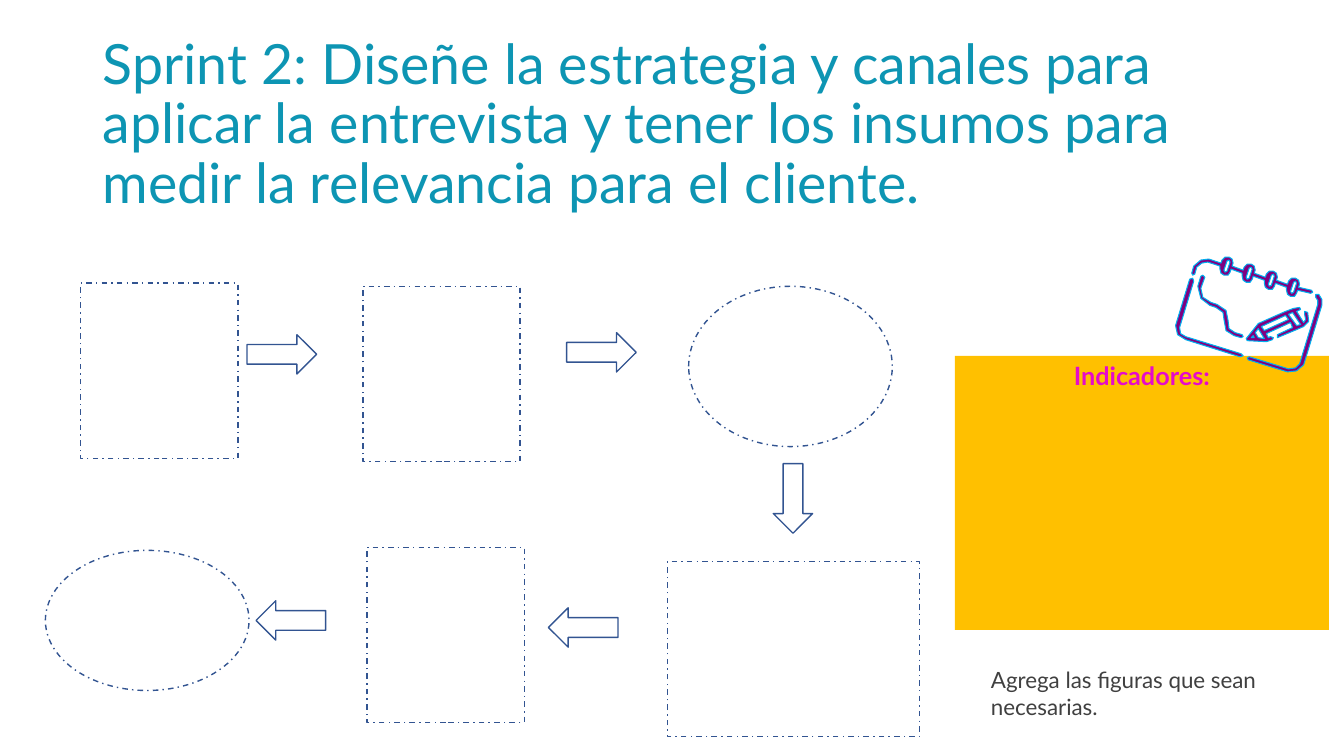
from dataclasses import dataclass

from pptx import Presentation
from pptx.dml.color import RGBColor
from pptx.enum.dml import MSO_LINE
from pptx.enum.shapes import MSO_SHAPE
from pptx.enum.text import MSO_ANCHOR, PP_ALIGN
from pptx.util import Pt

EMU_PER_PX = 9144


@dataclass(frozen=True)
class Theme:
    """Colours, font and type sizes of the slide."""
    font: str = "Lato"
    title: str = "0D95B3"
    outline: str = "325491"
    panel: str = "FFC000"
    heading: str = "E50BCB"
    hint: str = "404040"
    icon: str = "800080"
    icon_outline: str = "00B0F0"
    title_size: float = 39.6
    heading_size: int = 18
    hint_size: int = 16


THEME = Theme()

STEP_WIDTH, STEP_HEIGHT = 156, 174
OVAL_WIDTH = 202
ARROW_WIDTH, ARROW_HEIGHT = 69, 39
STEPS = [
    (MSO_SHAPE.RECTANGLE, 35, 0, STEP_WIDTH, STEP_HEIGHT),
    (MSO_SHAPE.RECTANGLE, 315, 3, STEP_WIDTH, STEP_HEIGHT),
    (MSO_SHAPE.OVAL, 638, 3, OVAL_WIDTH, 159),
    (MSO_SHAPE.RECTANGLE, 617, 276, 250, STEP_HEIGHT),
    (MSO_SHAPE.RECTANGLE, 319, 262, STEP_WIDTH, STEP_HEIGHT),
    (MSO_SHAPE.OVAL, 0, 265, OVAL_WIDTH, 139),
]
ARROWS = [(200, 51, 0), (517, 49, 0), (707, 194, 90), (499, 322, 180), (209, 315, 180)]

RING_COUNT, RING_STEP = 4, (22, 7)
RING_HOLE = [(54, 3), (55, 5), (52, 14), (50, 15), (49, 13), (52, 4)]
RING_BOTTOM = [(45, 9), (45, 12), (46, 16), (49, 18), (53, 18), (55, 15), (56, 12)]
RING_TOP = [(57, 9), (58, 6), (57, 2), (54, 0), (50, 0), (47, 3), (46, 6)]
SPINE_LEFT = [(34, 2), (26, 3), (19, 9), (17, 16), (18, 18), (20, 17), (22, 10),
              (27, 6), (33, 5)]
SPINE_RIGHT = [(135, 36), (137, 35), (136, 33)]
COVER_RIGHT = [(142, 37), (140, 37), (140, 40), (142, 43), (142, 47), (124, 106),
               (120, 110), (113, 111), (74, 99), (72, 100), (73, 102), (112, 114),
               (121, 113), (128, 107), (146, 48), (146, 42), (143, 37)]
COVER_LEFT = [(18, 21), (15, 22), (1, 68), (3, 77), (11, 82), (65, 99), (68, 98),
              (66, 96), (11, 79), (6, 76), (5, 70), (19, 24)]
PAGE_CURVE = [(28, 18), (26, 19), (23, 29), (26, 41), (35, 48), (41, 50), (48, 55),
              (49, 62), (51, 73), (59, 78), (66, 80), (68, 79), (67, 77), (60, 75),
              (54, 71), (53, 63), (51, 53), (42, 47), (36, 45), (28, 40), (26, 31),
              (30, 20)]
PENCIL = [(124, 50), (118, 51), (110, 54), (83, 66), (79, 71), (71, 81), (72, 83),
          (91, 84), (97, 82), (98, 80), (95, 79), (93, 80), (91, 76), (115, 65),
          (117, 70), (102, 77), (102, 80), (121, 72), (128, 69), (133, 64), (132, 55),
          (129, 54), (129, 57), (130, 62), (128, 65), (121, 54), (125, 52)]
PENCIL_HOLES = [
    [(117, 55), (125, 67), (121, 68), (113, 57)],
    [(110, 58), (113, 62), (89, 73), (86, 69)],
    [(83, 71), (89, 81), (83, 80), (80, 75)],
    [(78, 78), (79, 80), (76, 80)],
]


def px(*lengths):
    """Turn px lengths into EMU."""
    return [length * EMU_PER_PX for length in lengths]


def add_run(paragraph, text, size, color, bold=False):
    """Add one styled run to a paragraph."""
    run = paragraph.add_run()
    run.text = text
    run.font.name = THEME.font
    run.font.size = Pt(size)
    run.font.bold = bold
    run.font.color.rgb = RGBColor.from_string(color)


def add_text_box(slide, box, text, size, color):
    """Add a wrapping text box holding one run."""
    shape = slide.shapes.add_textbox(*px(*box))
    shape.text_frame.word_wrap = True
    add_run(shape.text_frame.paragraphs[0], text, size, color)
    return shape


def add_outlined(slide, kind, box):
    """Add an unfilled preset shape with a thin outline."""
    shape = slide.shapes.add_shape(kind, *px(*box))
    shape.shadow.inherit = False
    shape.fill.background()
    shape.line.color.rgb = RGBColor.from_string(THEME.outline)
    shape.line.width = Pt(1)
    return shape


def add_title(slide, box):
    """Add the slide title, growing upwards from the box bottom."""
    shape = add_text_box(
        slide, box,
        "Sprint 2: Diseñe la estrategia y canales para aplicar la entrevista "
        "y tener los insumos para medir la relevancia para el cliente.",
        THEME.title_size, THEME.title)
    shape.text_frame.vertical_anchor = MSO_ANCHOR.BOTTOM
    shape.text_frame.margin_bottom = px(13)[0]
    shape.text_frame.paragraphs[0].line_spacing = 0.9


def add_flow(slide, box):
    """Add the empty steps and the arrows leading through them."""
    left, top = box[:2]
    for x, y, rotation in ARROWS:
        arrow = add_outlined(slide, MSO_SHAPE.RIGHT_ARROW,
                             (left + x, top + y, ARROW_WIDTH, ARROW_HEIGHT))
        arrow.rotation = rotation
    for kind, x, y, width, height in STEPS:
        step = add_outlined(slide, kind, (left + x, top + y, width, height))
        step.line.dash_style = MSO_LINE.DASH_DOT


def add_indicators(slide, box):
    """Add the indicators panel with its heading."""
    panel = slide.shapes.add_shape(MSO_SHAPE.RECTANGLE, *px(*box))
    panel.shadow.inherit = False
    panel.fill.solid()
    panel.fill.fore_color.rgb = RGBColor.from_string(THEME.panel)
    panel.line.fill.background()
    panel.text_frame.vertical_anchor = MSO_ANCHOR.TOP
    paragraph = panel.text_frame.paragraphs[0]
    paragraph.alignment = PP_ALIGN.CENTER
    add_run(paragraph, "Indicadores:", THEME.heading_size, THEME.heading, bold=True)


def ring_points(points, index):
    """Move ring points to the ring with the given index."""
    return [(x + index * RING_STEP[0], y + index * RING_STEP[1]) for x, y in points]


def spiral_contours():
    """Return the notebook spine outline followed by its ring holes."""
    rings = range(RING_COUNT)
    bottom = [point for ring in rings for point in ring_points(RING_BOTTOM, ring)]
    top = [point for ring in reversed(rings) for point in ring_points(RING_TOP, ring)]
    outline = SPINE_LEFT + bottom + SPINE_RIGHT + top
    return [outline] + [ring_points(RING_HOLE, ring) for ring in rings]


def add_notebook(slide, box):
    """Add the tilted notebook with its pencil."""
    parts = [[COVER_RIGHT], [COVER_LEFT], spiral_contours(), [PAGE_CURVE],
             [PENCIL] + PENCIL_HOLES]
    for contours in parts:
        builder = slide.shapes.build_freeform(*contours[0][0], scale=EMU_PER_PX)
        builder.add_line_segments(contours[0][1:])
        for hole in contours[1:]:
            builder.move_to(*hole[0])
            builder.add_line_segments(hole[1:])
        shape = builder.convert_to_shape(*px(*box[:2]))
        shape.shadow.inherit = False
        shape.fill.solid()
        shape.fill.fore_color.rgb = RGBColor.from_string(THEME.icon)
        shape.line.color.rgb = RGBColor.from_string(THEME.icon_outline)
        shape.line.width = Pt(0.75)


def main():
    """Build and save the slide."""
    presentation = Presentation()
    presentation.slide_width, presentation.slide_height = px(1333, 750)
    slide = presentation.slides.add_slide(presentation.slide_layouts[6])
    add_title(slide, (92, 82, 1150, 145))
    add_flow(slide, (45, 281, 867, 450))
    add_indicators(slide, (947, 353, 371, 272))
    add_notebook(slide, (1165, 255, 146, 114))
    add_text_box(slide, (973, 656, 283, 91), "Agrega las figuras que sean necesarias.",
                 THEME.hint_size, THEME.hint)
    presentation.save("out.pptx")


if __name__ == "__main__":
    main()
